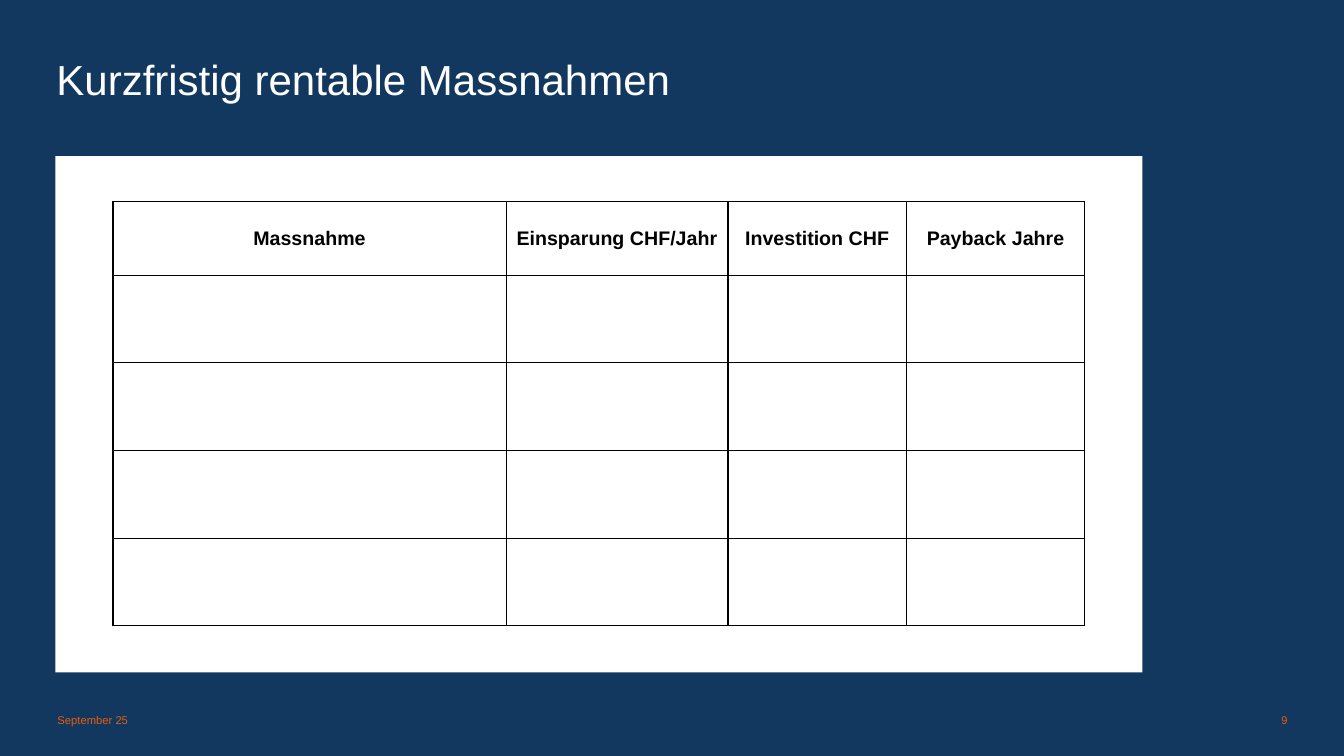
from dataclasses import dataclass

from lxml import etree
from pptx import Presentation
from pptx.dml.color import RGBColor
from pptx.enum.shapes import MSO_SHAPE
from pptx.enum.text import MSO_ANCHOR, PP_ALIGN
from pptx.oxml.ns import qn
from pptx.slide import Slide
from pptx.util import Emu, Pt

RECTANGLE = MSO_SHAPE.RECTANGLE
TOP, MIDDLE, BOTTOM = MSO_ANCHOR.TOP, MSO_ANCHOR.MIDDLE, MSO_ANCHOR.BOTTOM
LEFT, CENTER, RIGHT = PP_ALIGN.LEFT, PP_ALIGN.CENTER, PP_ALIGN.RIGHT

EMU_PER_PX = 9144
FONT = "Arial"
NAVY, ORANGE, WHITE, BLACK = "12385F", "EA5B0C", "FFFFFF", "000000"

HEADERS = ["Massnahme", "Einsparung CHF/Jahr", "Investition CHF", "Payback Jahre"]
COLUMN_WIDTHS = [390, 220, 177, 177]
ROW_HEIGHTS = [73] + [87] * 4


@dataclass
class Label:
    text: str
    left: int
    top: int
    width: int
    height: int
    size: int
    color: str
    anchor: MSO_ANCHOR
    alignment: PP_ALIGN
    line_spacing: float = 1.0


LABELS = [
    Label("Kurzfristig rentable Massnahmen", 56, 48, 1221, 87, 30, WHITE, TOP, LEFT, 1.1),
    Label("9", 1160, 706, 117, 15, 8, ORANGE, BOTTOM, RIGHT),
    Label("September 25", 57, 706, 166, 15, 8, ORANGE, BOTTOM, LEFT),
]


def px(length: int) -> Emu:
    return Emu(length * EMU_PER_PX)


def rgb(color: str) -> RGBColor:
    return RGBColor.from_string(color)


def add_label(slide: Slide, label: Label) -> None:
    shape = slide.shapes.add_textbox(
        px(label.left), px(label.top), px(label.width), px(label.height)
    )
    frame = shape.text_frame
    frame.word_wrap = True
    frame.vertical_anchor = label.anchor
    frame.margin_left = frame.margin_right = frame.margin_top = frame.margin_bottom = 0
    paragraph = frame.paragraphs[0]
    paragraph.text = label.text
    paragraph.alignment = label.alignment
    paragraph.line_spacing = label.line_spacing
    paragraph.font.name = FONT
    paragraph.font.size = Pt(label.size)
    paragraph.font.color.rgb = rgb(label.color)


def add_panel(slide: Slide) -> None:
    panel = slide.shapes.add_shape(RECTANGLE, px(55), px(155), px(1078), px(512))
    panel.shadow.inherit = False
    panel.fill.solid()
    panel.fill.fore_color.rgb = rgb(WHITE)
    panel.line.fill.background()


def add_borders(cell) -> None:
    properties = cell._tc.get_or_add_tcPr()
    for side in ("a:lnL", "a:lnR", "a:lnT", "a:lnB"):
        border = etree.SubElement(properties, qn(side), w=str(Pt(1)))
        fill = etree.SubElement(border, qn("a:solidFill"))
        etree.SubElement(fill, qn("a:srgbClr"), val=BLACK)


def add_measures_table(slide: Slide) -> None:
    table = slide.shapes.add_table(
        len(ROW_HEIGHTS), len(COLUMN_WIDTHS),
        px(112), px(200), px(sum(COLUMN_WIDTHS)), px(sum(ROW_HEIGHTS)),
    ).table
    table.first_row = False
    table.horz_banding = False
    for column, width in zip(table.columns, COLUMN_WIDTHS):
        column.width = px(width)
    for row, height in zip(table.rows, ROW_HEIGHTS):
        row.height = px(height)
    for cell in table.iter_cells():
        add_borders(cell)
        cell.fill.background()
    for cell, header in zip(table.rows[0].cells, HEADERS):
        cell.vertical_anchor = MIDDLE
        paragraph = cell.text_frame.paragraphs[0]
        paragraph.text = header
        paragraph.alignment = CENTER
        paragraph.font.name = FONT
        paragraph.font.size = Pt(14)
        paragraph.font.bold = True
        paragraph.font.color.rgb = rgb(BLACK)


def main() -> None:
    presentation = Presentation()
    presentation.slide_width = px(1333)
    presentation.slide_height = px(750)
    slide = presentation.slides.add_slide(presentation.slide_layouts[6])
    slide.background.fill.solid()
    slide.background.fill.fore_color.rgb = rgb(NAVY)
    for label in LABELS:
        add_label(slide, label)
    add_panel(slide)
    add_measures_table(slide)
    presentation.save("out.pptx")


if __name__ == "__main__":
    main()
